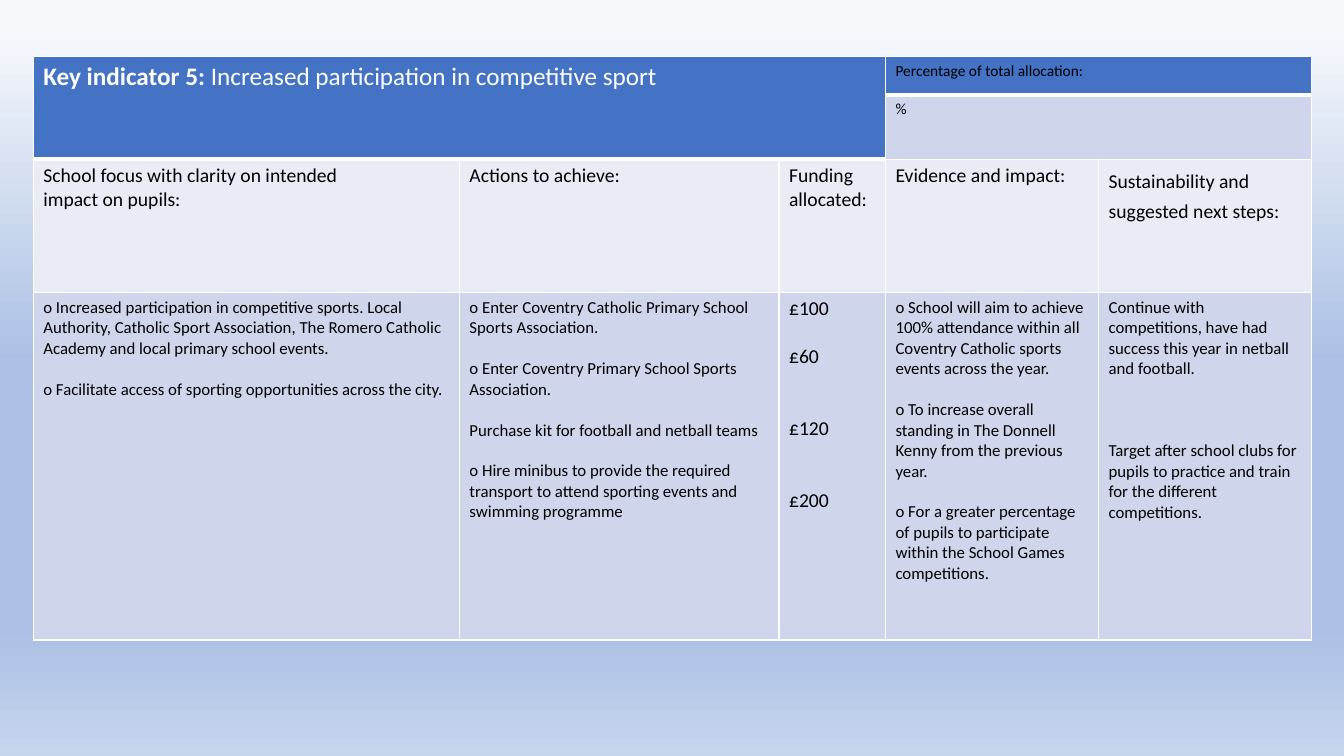
from lxml.etree import SubElement
from pptx import Presentation
from pptx.dml.color import RGBColor
from pptx.oxml import parse_xml
from pptx.oxml.ns import nsdecls, qn
from pptx.util import Inches, Pt

FONT = "Calibri"
LINE_HEIGHT = 1.22
WHITE, BLACK, BLUE = "FFFFFF", "000000", "4472C4"
PALE, LIGHT = "E9EBF5", "CFD5EA"
COLUMN_PARTS = [4, 3, 1, 2, 2]
ROW_HEIGHTS = [0.38, 0.64, 1.32, 3.45]
LEFT, TOP, WIDTH = 0.33, 0.56, 12.68
GRADIENT = [(4, "F6F8FC"), (48, "ABC0E4"), (83, "ABC0E4"), (100, "C7D5ED")]

HEADINGS = [
    ["School focus with clarity on intended", "impact on pupils:"],
    ["Actions to achieve:"],
    ["Funding allocated:"],
    ["Evidence and impact:"],
    ["Sustainability and suggested next steps:"],
]
DETAILS = [
    [
        "o Increased participation in competitive sports. Local Authority, Catholic Sport "
        "Association, The Romero Catholic Academy and local primary school events.",
        "o Facilitate access of sporting opportunities across the city.",
    ],
    [
        "o Enter Coventry Catholic Primary School Sports Association.",
        "o Enter Coventry Primary School Sports Association.",
        "Purchase kit for football and netball teams",
        "o Hire minibus to provide the required transport to attend sporting events "
        "and swimming programme",
    ],
    ["£100", "£60", "£120", "£200"],
    [
        "o School will aim to achieve 100% attendance within all Coventry Catholic "
        "sports events across the year.",
        "o To increase overall standing in The Donnell Kenny from the previous year.",
        "o For a greater percentage of pupils to participate within the School Games "
        "competitions.",
    ],
    [
        "Continue with competitions, have had success this year in netball and football.",
        "Target after school clubs for pupils to practice and train for the different "
        "competitions.",
    ],
]
DETAIL_SIZES = [12, 12, 14, 12, 12]
DETAIL_GAPS = [[1], [1, 1, 1], [1, 2, 2], [1, 1], [3]]


def color(value):
    return RGBColor.from_string(value)


def set_background(slide):
    stops = "".join(
        f'<a:gs pos="{position * 1000}"><a:srgbClr val="{value}"/></a:gs>'
        for position, value in GRADIENT
    )
    background = parse_xml(
        f'<p:bg {nsdecls("p", "a")}><p:bgPr><a:gradFill rotWithShape="1">'
        f'<a:gsLst>{stops}</a:gsLst><a:lin ang="5400000" scaled="0"/></a:gradFill>'
        "<a:effectLst/></p:bgPr></p:bg>"
    )
    slide.element.cSld.insert(0, background)


def set_borders(cell, row, column):
    under_title = column < 3
    heavy_bottom = row == 0 or (row == 1 and under_title)
    heavy_top = row == (2 if under_title else 1)
    properties = cell._tc.get_or_add_tcPr()
    widths = {"L": 1, "R": 1, "T": 3 if heavy_top else 1, "B": 3 if heavy_bottom else 1}
    for side, width in widths.items():
        line = SubElement(properties, qn(f"a:ln{side}"), w=str(Pt(width)))
        fill = SubElement(line, qn("a:solidFill"))
        SubElement(fill, qn("a:srgbClr"), val=WHITE)


def set_fill(cell, value):
    cell.fill.solid()
    cell.fill.fore_color.rgb = color(value)


def format_run(run, size, value, bold=False):
    run.font.name = FONT
    run.font.size = Pt(size)
    run.font.bold = bold
    run.font.color.rgb = color(value)


def write_cell(cell, texts, size, gaps=()):
    cell.text_frame.text = "\n".join(texts)
    paragraphs = cell.text_frame.paragraphs
    for paragraph in paragraphs:
        format_run(paragraph.runs[0], size, BLACK)
    for paragraph, blank_lines in zip(paragraphs[1:], gaps):
        paragraph.space_before = Pt(round(blank_lines * size * LINE_HEIGHT, 1))


def write_title(cell):
    paragraph = cell.text_frame.paragraphs[0]
    for text, bold in [
        ("Key indicator 5: ", True),
        ("Increased participation in competitive sport", False),
    ]:
        run = paragraph.add_run()
        run.text = text
        format_run(run, 18, WHITE, bold)


def add_indicator_table(slide):
    shape = slide.shapes.add_table(
        len(ROW_HEIGHTS), len(COLUMN_PARTS),
        Inches(LEFT), Inches(TOP), Inches(WIDTH), Inches(sum(ROW_HEIGHTS)),
    )
    table = shape.table
    for column, part in zip(table.columns, COLUMN_PARTS):
        column.width = Inches(WIDTH * part / sum(COLUMN_PARTS))
    for row, height in zip(table.rows, ROW_HEIGHTS):
        row.height = Inches(height)
    for row, fill in enumerate([BLUE, LIGHT, PALE, LIGHT]):
        for column in range(len(COLUMN_PARTS)):
            cell = table.cell(row, column)
            set_borders(cell, row, column)
            set_fill(cell, BLUE if row < 2 and column < 3 else fill)
    table.cell(0, 0).merge(table.cell(1, 2))
    for row in range(2):
        table.cell(row, 3).merge(table.cell(row, 4))
    return table


def main():
    presentation = Presentation()
    presentation.slide_width = Inches(13.33)
    presentation.slide_height = Inches(7.5)
    slide = presentation.slides.add_slide(presentation.slide_layouts[6])
    set_background(slide)
    table = add_indicator_table(slide)
    write_title(table.cell(0, 0))
    write_cell(table.cell(0, 3), ["Percentage of total allocation:"], 11)
    write_cell(table.cell(1, 3), ["%"], 11)
    for column, texts in enumerate(HEADINGS):
        write_cell(table.cell(2, column), texts, 14)
    table.cell(2, 4).text_frame.paragraphs[0].line_spacing = 1.25
    for column, texts in enumerate(DETAILS):
        write_cell(table.cell(3, column), texts, DETAIL_SIZES[column], DETAIL_GAPS[column])
    presentation.save("out.pptx")


if __name__ == "__main__":
    main()
